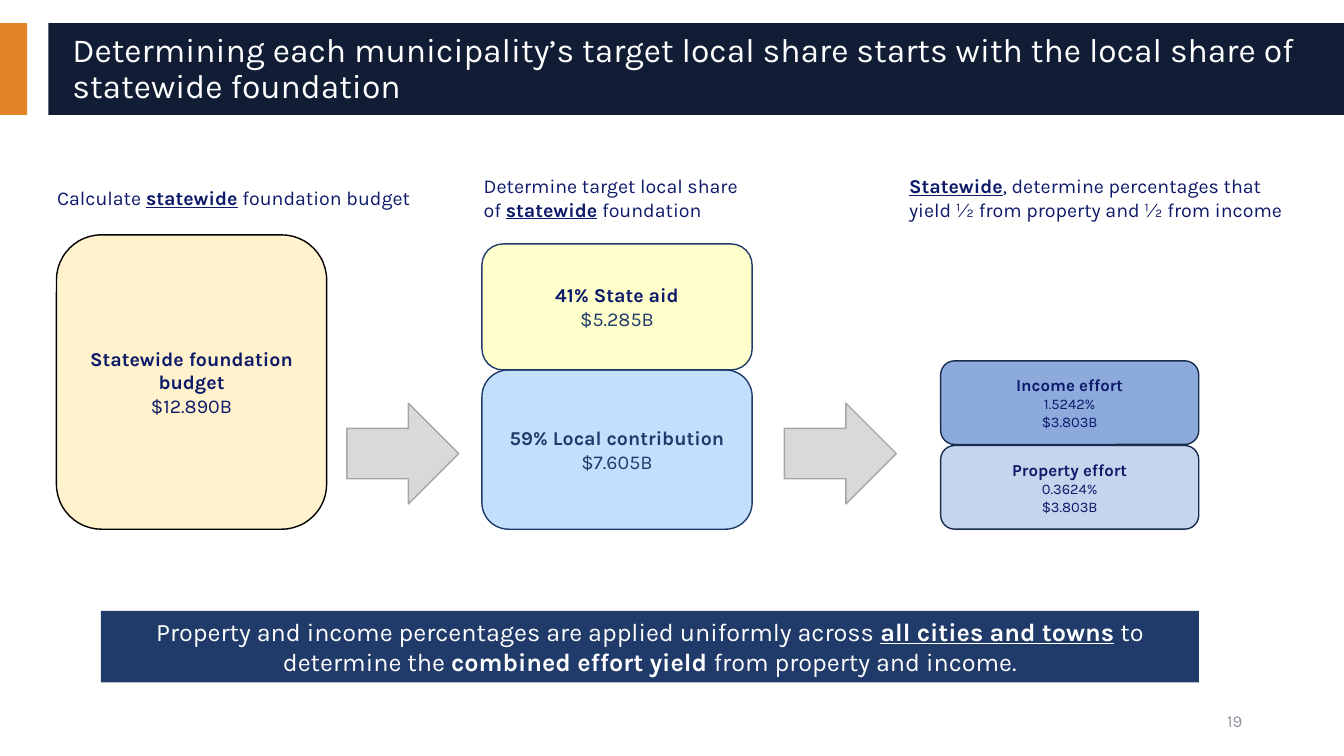
import pptx
import pptx.util
import pptx.dml.color
import pptx.enum.shapes
import pptx.enum.text
from dataclasses import dataclass

Kind = pptx.enum.shapes.MSO_SHAPE
Align = pptx.enum.text.PP_ALIGN
SCALE = 9144

HUES = {
    "orange": "E38526", "night": "101D35", "white": "FFFFFF", "ink": "0D1969",
    "navy": "203B6A", "steel": "182C4E", "black": "000000", "cream": "FFF2CC",
    "lemon": "FFFFCC", "sky": "C2E0FD", "pale": "C6D4EE", "blue": "8DAADC",
    "silver": "D9D9D9", "grey": "A6A6A6", "slate": "8D92A1",
}


@dataclass(frozen=True)
class Run:
    text: str
    bold: bool = False
    under: bool = False


@dataclass(frozen=True)
class Para:
    runs: tuple[Run, ...]
    size: float
    hue: str = "ink"
    align: Align = Align.CENTER
    space: float | None = None


@dataclass(frozen=True)
class Box:
    left: int
    top: int
    width: int
    height: int
    kind: Kind = Kind.ROUNDED_RECTANGLE
    fill: str | None = None
    line: str | None = None
    paras: tuple[Para, ...] = ()


def px(count: int) -> pptx.util.Emu:
    return pptx.util.Emu(count * SCALE)


def color(name: str) -> pptx.dml.color.RGBColor:
    return pptx.dml.color.RGBColor.from_string(HUES[name])


def write(frame, paras: tuple[Para, ...]) -> None:
    frame.word_wrap = True
    frame.vertical_anchor = pptx.enum.text.MSO_ANCHOR.MIDDLE
    for index, para in enumerate(paras):
        item = frame.add_paragraph() if index else frame.paragraphs[0]
        item.alignment = para.align
        item.line_spacing = para.space
        item.font.name = "Karla"
        item.font.size = pptx.util.Pt(para.size)
        item.font.color.rgb = color(para.hue)
        same = len({(run.bold, run.under) for run in para.runs}) == 1
        if same:
            item.font.bold = para.runs[0].bold
        for run in para.runs:
            if run.text == "\n":
                item.add_line_break()
                continue
            part = item.add_run()
            part.text = run.text
            if not same:
                part.font.bold = run.bold
                part.font.underline = run.under


def draw(slide, box: Box) -> None:
    shape = slide.shapes.add_shape(
        box.kind, px(box.left), px(box.top), px(box.width), px(box.height))
    shape.shadow.inherit = False
    if box.fill:
        shape.fill.solid()
        shape.fill.fore_color.rgb = color(box.fill)
    else:
        shape.fill.background()
    if box.line:
        shape.line.color.rgb = color(box.line)
        shape.line.width = pptx.util.Pt(1)
    else:
        shape.line.fill.background()
    if box.paras:
        write(shape.text_frame, box.paras)


def note(slide, box: Box) -> None:
    shape = slide.shapes.add_textbox(
        px(box.left), px(box.top), px(box.width), px(box.height))
    write(shape.text_frame, box.paras)


def label(left: int, width: int, *runs: Run) -> Box:
    return Box(left, 167, width, 58, paras=(Para(runs, 14, align=Align.LEFT),))


def stack(head: str, *rest: str, size: float = 14, small: float = 14,
          hue: str = "ink", tail: str = "ink") -> tuple[Para, ...]:
    first = Para((Run(head, True),), size, hue)
    return (first, *(Para((Run(text),), small, tail) for text in rest))


def effort(top: int, fill: str, head: str, rate: str) -> Box:
    return Box(933, top, 256, 83, fill=fill, line="steel",
               paras=stack(head, rate, "$3.803B", size=12, small=10.5))


STATE = Run("statewide", True, True)

BARS = (
    Box(0, 23, 27, 91, Kind.RECTANGLE, "orange"),
    Box(48, 23, 1286, 91, Kind.RECTANGLE, "night"),
)

TITLE = Box(62, 32, 1244, 74, paras=(Para((Run(
    "Determining each municipality’s target local share starts with "
    "the local share of statewide foundation"),),
    24, "white", Align.LEFT, 0.9),))

STEPS = (
    label(44, 389, Run("Calculate "), STATE, Run(" foundation budget")),
    label(467, 389, Run("Determine target local share"), Run("\n"),
          Run("of "), STATE, Run(" foundation")),
    label(889, 400, Run("Statewide", True, True),
          Run(", determine percentages that yield ½ from property "
              "and ½ from income")),
    Box(478, 367, 268, 158, fill="sky", line="navy",
        paras=stack("59% Local contribution", "$7.605B",
                    hue="navy", tail="navy")),
    Box(478, 242, 268, 125, fill="lemon", line="navy",
        paras=stack("41% State aid", "$5.285B", tail="navy")),
    effort(442, "pale", "Property effort", "0.3624%"),
    effort(358, "blue", "Income effort", "1.5242%"),
    Box(56, 233, 268, 292, fill="cream", line="black",
        paras=stack("Statewide foundation budget", "$12.890B")),
    *(Box(left, 400, 111, 100, Kind.RIGHT_ARROW, "silver", "grey")
      for left in (344, 778)),
    Box(100, 606, 1089, 71, Kind.RECTANGLE, "navy", paras=(Para((
        Run("Property and income percentages are applied uniformly across "),
        Run("all cities and towns", True, True),
        Run(" to determine the "),
        Run("combined effort yield ", True),
        Run("from property and income.")), 18, "white"),)),
)

PAGE = Box(942, 695, 300, 40,
           paras=(Para((Run("19"),), 12, "slate", Align.RIGHT),))


def main() -> None:
    deck = pptx.Presentation()
    deck.slide_width, deck.slide_height = px(1333), px(750)
    slide = deck.slides.add_slide(deck.slide_layouts[6])
    for bar in BARS:
        draw(slide, bar)
    note(slide, TITLE)
    for step in STEPS:
        draw(slide, step)
    note(slide, PAGE)
    deck.save("out.pptx")


if __name__ == "__main__":
    main()
